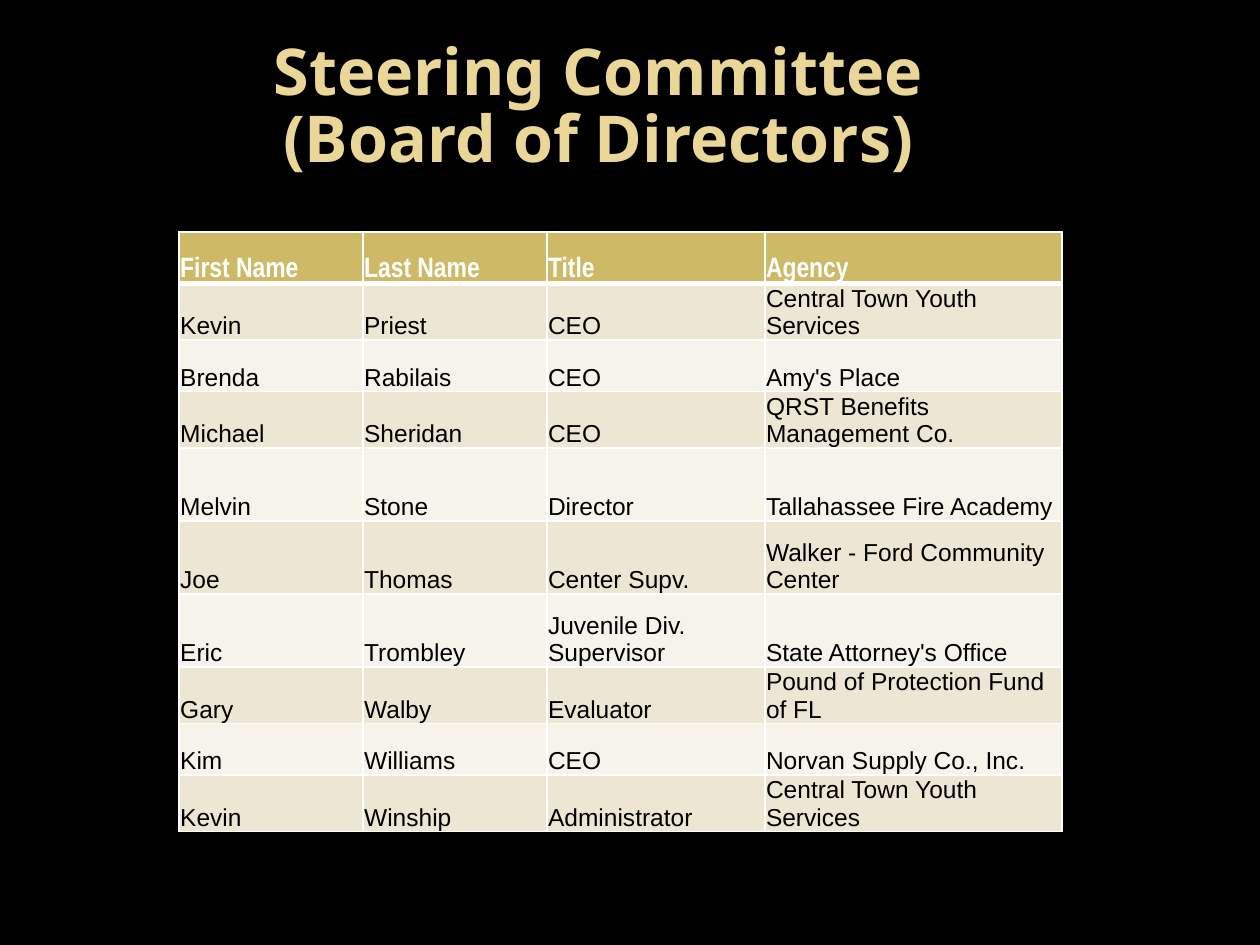
import pptx
import pptx.dml.color
import pptx.enum.text
import pptx.oxml
import pptx.oxml.ns
import pptx.util

RGBColor = pptx.dml.color.RGBColor
Inches = pptx.util.Inches
Pt = pptx.util.Pt
MSO_ANCHOR = pptx.enum.text.MSO_ANCHOR

BLACK = RGBColor(0x00, 0x00, 0x00)
WHITE = RGBColor(0xFF, 0xFF, 0xFF)
PALE_GOLD = RGBColor(0xEA, 0xD6, 0x96)
GOLD = RGBColor(0xCE, 0xB9, 0x66)
SAND = RGBColor(0xED, 0xE6, 0xD3)
IVORY = RGBColor(0xF6, 0xF3, 0xEA)

SLIDE_WIDTH, SLIDE_HEIGHT = Inches(10), Inches(7.5)

TITLE_FONT = {"name": "Noto Sans", "size": Pt(36.9), "bold": True}
HEADER_FONT = {"name": "Arial Narrow", "size": Pt(16), "bold": True}
MEMBER_FONT = {"name": "Arial", "size": Pt(14), "bold": False}
CELL_FORMAT = {
    "vertical_anchor": MSO_ANCHOR.BOTTOM,
    "margin_left": Inches(0.01),
    "margin_top": Inches(0.01),
    "margin_right": Inches(0.01),
    "margin_bottom": 0,
}

COLUMN_SHARES = [0.146, 0.146, 0.173, 0.236]
LOW_ROW, HIGH_ROW = 0.41, 0.58
HIGH_ROWS = range(4, 7)
THIN, THICK = 1, 3

COMMITTEE = [
    ("First Name", "Last Name", "Title", "Agency"),
    ("Kevin", "Priest", "CEO", "Central Town Youth Services"),
    ("Brenda", "Rabilais", "CEO", "Amy's Place"),
    ("Michael", "Sheridan", "CEO", "QRST Benefits Management Co."),
    ("Melvin", "Stone", "Director", "Tallahassee Fire Academy"),
    ("Joe", "Thomas", "Center Supv.", "Walker - Ford Community Center"),
    ("Eric", "Trombley", "Juvenile Div. Supervisor", "State Attorney's Office"),
    ("Gary", "Walby", "Evaluator", "Pound of Protection Fund of FL"),
    ("Kim", "Williams", "CEO", "Norvan Supply Co., Inc."),
    ("Kevin", "Winship", "Administrator", "Central Town Youth Services"),
]


def apply_format(target, values):
    for attribute, value in values.items():
        setattr(target, attribute, value)


def style_font(font, values, color):
    apply_format(font, values)
    font.color.rgb = color


def add_borders(cell, widths):
    """Draw white cell borders; widths maps a side (L, R, T, B) to points."""
    properties = cell._tc.get_or_add_tcPr()
    for side, width in widths.items():
        properties.append(pptx.oxml.parse_xml(
            f'<a:ln{side} {pptx.oxml.ns.nsdecls("a")} w="{Pt(width)}">'
            f'<a:solidFill><a:srgbClr val="{WHITE}"/></a:solidFill></a:ln{side}>'))


def add_title(slide, text):
    title = slide.shapes.add_textbox(
        int(SLIDE_WIDTH * 0.05), int(SLIDE_HEIGHT * 0.04),
        int(SLIDE_WIDTH * 0.85), int(SLIDE_HEIGHT * 0.15))
    frame = title.text_frame
    apply_format(frame, {"word_wrap": True, "vertical_anchor": MSO_ANCHOR.MIDDLE})
    paragraph = frame.paragraphs[0]
    paragraph.text = text
    apply_format(paragraph, {"alignment": pptx.enum.text.PP_ALIGN.CENTER,
                             "line_spacing": 0.87})
    for run in paragraph.runs:
        style_font(run.font, TITLE_FONT, PALE_GOLD)


def fill_cell(cell, text, row):
    is_header = row == 0
    add_borders(cell, {"L": THIN, "R": THIN,
                       "T": THICK if row == 1 else THIN,
                       "B": THICK if is_header else THIN})
    apply_format(cell, CELL_FORMAT)
    cell.fill.solid()
    cell.fill.fore_color.rgb = GOLD if is_header else (IVORY, SAND)[row % 2]
    cell.text = text
    style_font(cell.text_frame.paragraphs[0].runs[0].font,
               HEADER_FONT if is_header else MEMBER_FONT,
               WHITE if is_header else BLACK)


def add_committee_table(slide):
    row_heights = [Inches(HIGH_ROW if row in HIGH_ROWS else LOW_ROW)
                   for row in range(len(COMMITTEE))]
    column_widths = [int(SLIDE_WIDTH * share) for share in COLUMN_SHARES]
    table = slide.shapes.add_table(
        len(row_heights), len(column_widths),
        int(SLIDE_WIDTH * 0.142), Inches(1.84),
        sum(column_widths), sum(row_heights)).table
    for column, width in zip(table.columns, column_widths):
        column.width = width
    for row, (height, entries) in enumerate(zip(row_heights, COMMITTEE)):
        table.rows[row].height = height
        for column, text in enumerate(entries):
            fill_cell(table.cell(row, column), text, row)


def main():
    deck = pptx.Presentation()
    apply_format(deck, {"slide_width": SLIDE_WIDTH, "slide_height": SLIDE_HEIGHT})
    slide = deck.slides.add_slide(deck.slide_layouts[6])
    slide.background.fill.solid()
    slide.background.fill.fore_color.rgb = BLACK
    add_committee_table(slide)
    add_title(slide, "Steering Committee\v(Board of Directors)")
    deck.save("out.pptx")


if __name__ == "__main__":
    main()
